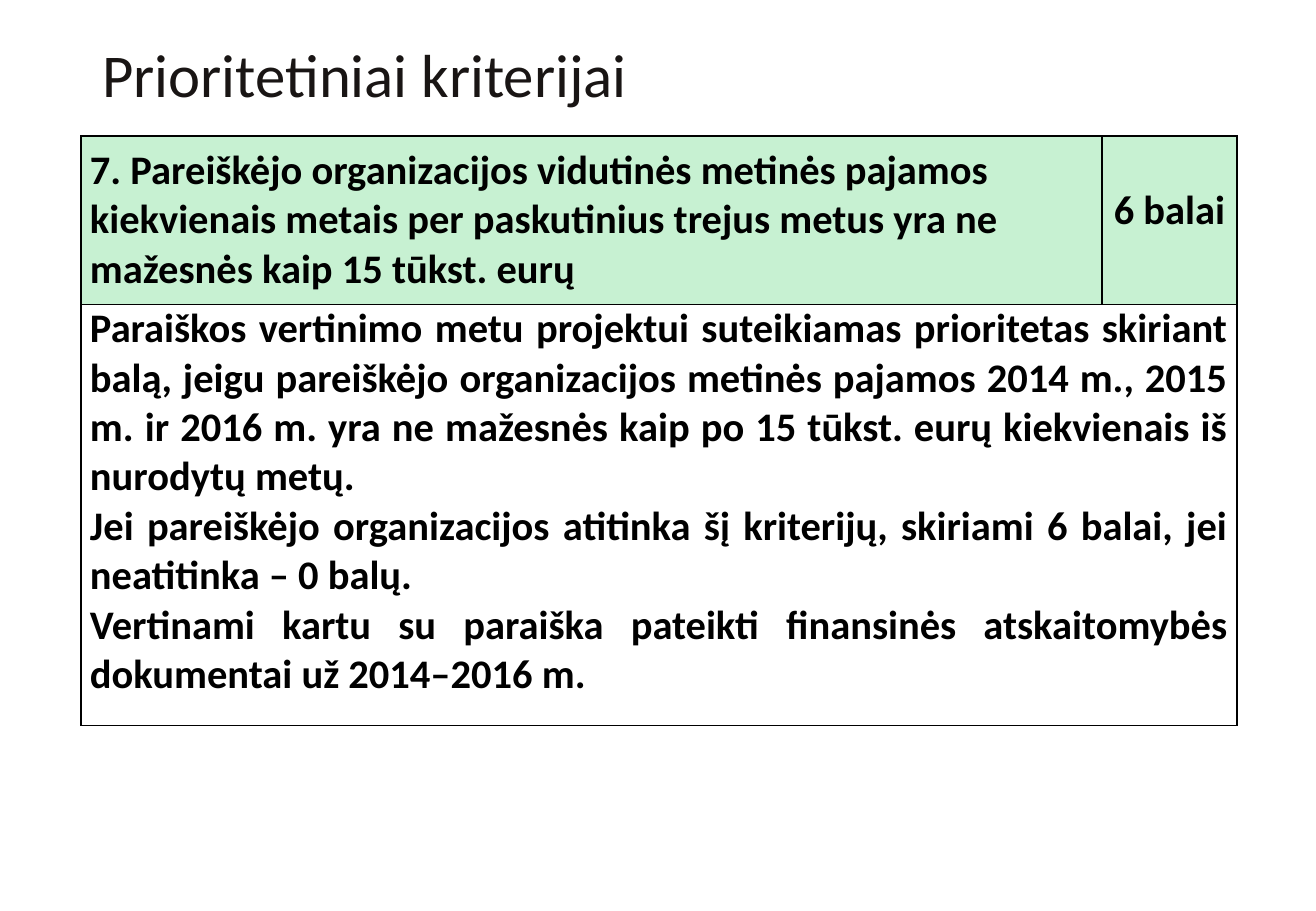
from lxml import etree
from pptx import Presentation
from pptx.dml.color import RGBColor
from pptx.enum.text import MSO_ANCHOR, PP_ALIGN
from pptx.oxml.ns import qn
from pptx.util import Pt

MID, TOP = MSO_ANCHOR.MIDDLE, MSO_ANCHOR.TOP
LEFT, CENTER, JUST = PP_ALIGN.LEFT, PP_ALIGN.CENTER, PP_ALIGN.JUSTIFY

SCALE = 7526
FONT = "Calibri"
COLORS = {"title": "191514", "text": "000000", "line": "000000", "head": "C7F1D2"}

TITLE = "Prioritetiniai kriterijai"
RULE = ["7. Pareiškėjo organizacijos vidutinės metinės pajamos kiekvienais metais "
        "per paskutinius trejus metus yra ne mažesnės kaip 15 tūkst. eurų"]
SCORE = ["6 balai"]
NOTES = [
    "Paraiškos vertinimo metu projektui suteikiamas prioritetas skiriant balą, "
    "jeigu pareiškėjo organizacijos metinės pajamos 2014 m., 2015 m. ir 2016 m. "
    "yra ne mažesnės kaip po 15 tūkst. eurų kiekvienais iš nurodytų metų.",
    "Jei pareiškėjo organizacijos atitinka šį kriterijų, skiriami 6 balai, "
    "jei neatitinka – 0 balų.",
    "Vertinami kartu su paraiška pateikti finansinės atskaitomybės dokumentai "
    "už 2014–2016 m.",
]
CELLS = [
    (0, 0, RULE, LEFT, MID, 10, "head", None),
    (0, 1, SCORE, CENTER, MID, 5, "head", Pt(18)),
    (1, 0, NOTES, JUST, TOP, 0, None, None),
]
COLS = [1021, 135]
ROWS = [168, 421]


def px(n):
    return round(n * SCALE)


def style(par, size, color, bold):
    font = par.font
    font.name, font.size, font.bold = FONT, Pt(size), bold
    font.color.rgb = RGBColor.from_string(COLORS[color])


def border(cell):
    props = cell._tc.get_or_add_tcPr()
    for side in ("lnL", "lnR", "lnT", "lnB"):
        line = etree.SubElement(props, qn("a:" + side), w=str(Pt(1)))
        fill = etree.SubElement(line, qn("a:solidFill"))
        etree.SubElement(fill, qn("a:srgbClr"), val=COLORS["line"])


def main():
    deck = Presentation()
    deck.slide_width, deck.slide_height = px(1316), px(911)
    slide = deck.slides.add_slide(deck.slide_layouts[5])

    title = slide.shapes.title
    title.left, title.top, title.width, title.height = map(px, (90, 42, 1135, 72))
    frame = title.text_frame
    frame.text = TITLE
    frame.vertical_anchor = MID
    head = frame.paragraphs[0]
    head.alignment, head.line_spacing = LEFT, 0.9
    style(head, 36, "title", False)

    table = slide.shapes.add_table(
        len(ROWS), len(COLS), px(81), px(136), px(sum(COLS)), px(sum(ROWS))).table
    table.first_row = table.horz_banding = False
    for col, width in zip(table.columns, COLS):
        col.width = px(width)
    for row, height in zip(table.rows, ROWS):
        row.height = px(height)
    for cell in table.iter_cells():
        border(cell)
        cell.fill.background()
    table.cell(1, 0).merge(table.cell(1, 1))

    for row, col, lines, align, anchor, pad, fill, space in CELLS:
        cell = table.cell(row, col)
        cell.margin_left = cell.margin_right = px(9)
        cell.margin_top = cell.margin_bottom = px(pad)
        cell.vertical_anchor = anchor
        if fill:
            cell.fill.solid()
            cell.fill.fore_color.rgb = RGBColor.from_string(COLORS[fill])
        cell.text = "\n".join(lines)
        for par in cell.text_frame.paragraphs:
            par.alignment = align
            if space:
                par.line_spacing = space
            style(par, 24, "text", True)

    deck.save("out.pptx")


if __name__ == "__main__":
    main()
